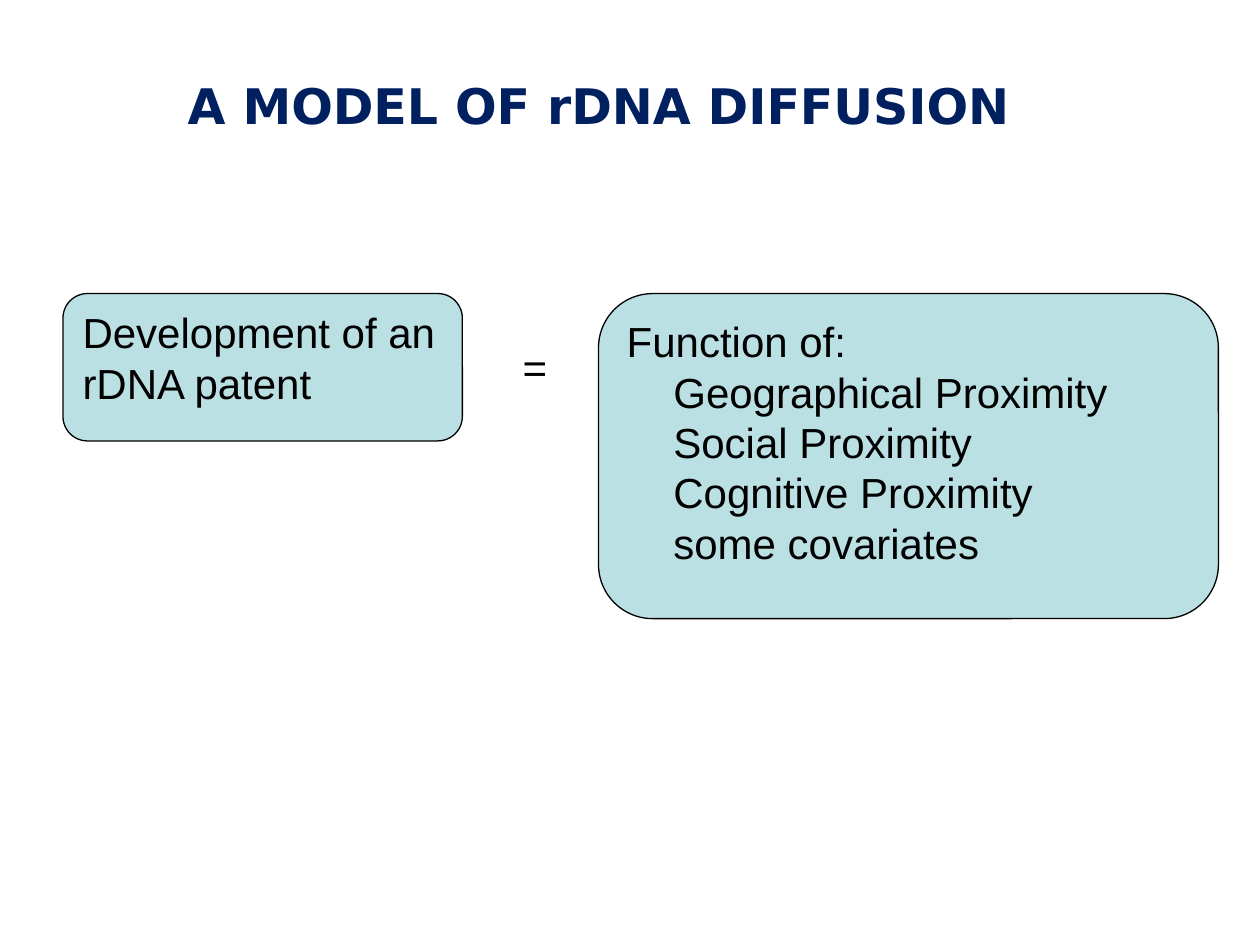
from pptx import Presentation
from pptx.dml.color import RGBColor
from pptx.enum.shapes import MSO_SHAPE
from pptx.enum.text import MSO_ANCHOR, PP_ALIGN
from pptx.util import Inches, Pt

NAVY = RGBColor(0x00, 0x20, 0x60)
BLACK = RGBColor(0x00, 0x00, 0x00)
PALE_TEAL = RGBColor(0xBB, 0xE0, 0xE3)


def write_line(paragraph, text, font="Arial", size=24, color=BLACK, bold=False,
               align=PP_ALIGN.LEFT, indent=0):
    paragraph.alignment = align
    if indent:
        properties = paragraph._p.get_or_add_pPr()
        properties.set("marL", str(Inches(indent)))
        properties.set("indent", "0")
    run = paragraph.add_run()
    run.text = text
    run.font.name = font
    run.font.size = Pt(size)
    run.font.bold = bold
    run.font.color.rgb = color


presentation = Presentation()
presentation.slide_width = Inches(10)
presentation.slide_height = Inches(7.5)
slide = presentation.slides.add_slide(presentation.slide_layouts[6])

title = slide.shapes.add_textbox(Inches(1), Inches(0.42), Inches(7.5), Inches(0.83))
title.text_frame.word_wrap = True
title.text_frame.vertical_anchor = MSO_ANCHOR.MIDDLE
write_line(title.text_frame.paragraphs[0], "A MODEL OF rDNA DIFFUSION",
           font="DejaVu Sans", size=28, color=NAVY, bold=True, align=PP_ALIGN.CENTER)

equals = slide.shapes.add_textbox(Inches(4.05), Inches(2.66), Inches(0.4), Inches(0.5))
equals.text_frame.word_wrap = False
write_line(equals.text_frame.paragraphs[0], "=")

boxes = [
    (0.5, 3.17, 1.17, [("Development of an rDNA patent", 0)]),
    (4.75, 4.92, 2.58, [
        ("Function of:", 0),
        ("Geographical Proximity", 0.37),
        ("Social Proximity", 0.37),
        ("Cognitive Proximity", 0.37),
        ("some covariates", 0.37),
    ]),
]
for left, width, height, lines in boxes:
    shape = slide.shapes.add_shape(MSO_SHAPE.ROUNDED_RECTANGLE, Inches(left), Inches(2.33),
                                   Inches(width), Inches(height))
    shape.shadow.inherit = False
    shape.fill.solid()
    shape.fill.fore_color.rgb = PALE_TEAL
    shape.line.color.rgb = BLACK
    shape.line.width = Pt(0.75)
    frame = shape.text_frame
    frame.word_wrap = True
    frame.vertical_anchor = MSO_ANCHOR.TOP
    for index, (text, indent) in enumerate(lines):
        paragraph = frame.add_paragraph() if index else frame.paragraphs[0]
        write_line(paragraph, text, indent=indent)

presentation.save("out.pptx")
